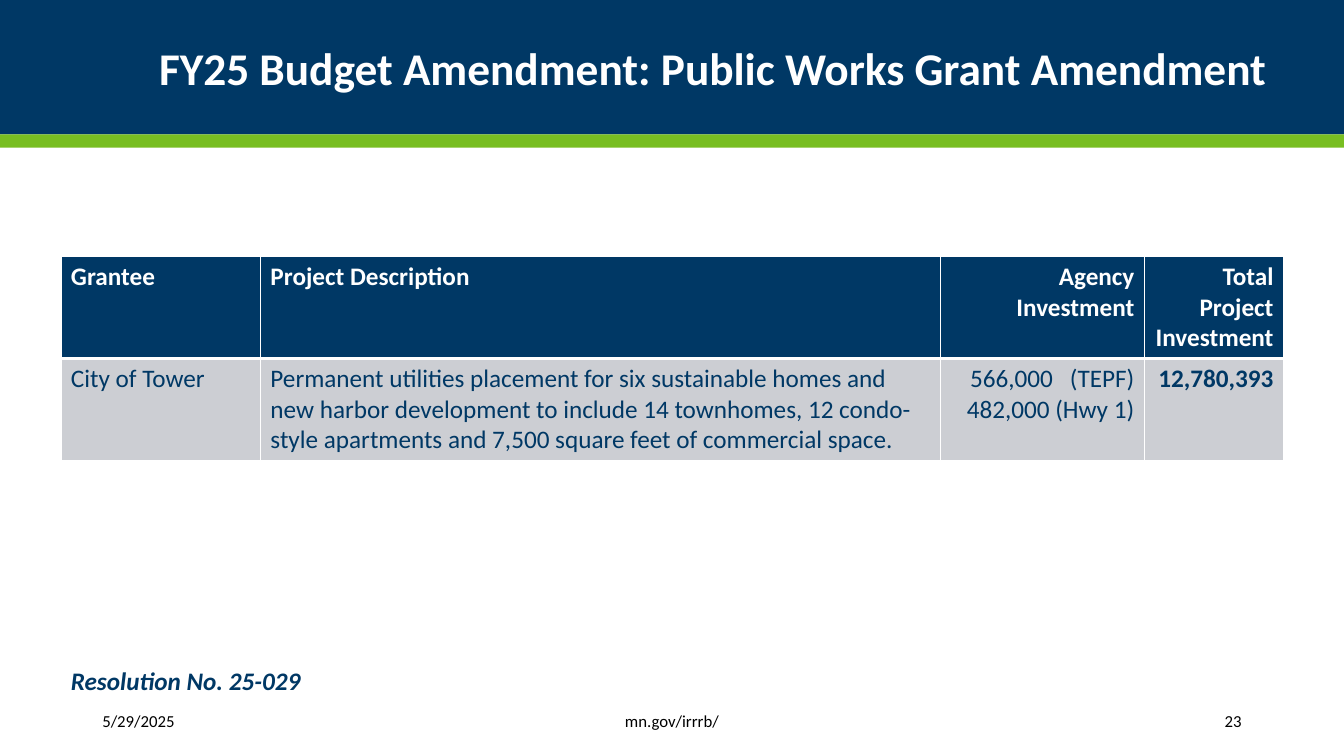
import pptx
import pptx.util
import pptx.dml.color
import pptx.enum.shapes
import pptx.enum.text
import pptx.oxml
import pptx.oxml.ns

Pt = pptx.util.Pt
ALIGN = pptx.enum.text.PP_ALIGN
ANCHOR = pptx.enum.text.MSO_ANCHOR
FONT = "Calibri"
COLORS = {
    "navy": "003865",
    "green": "78BE21",
    "white": "FFFFFF",
    "black": "000000",
    "grey": "CCCED3",
}
COLUMN_WIDTHS = [142.5, 486, 145.5, 99.4]
ROW_HEIGHT = 73
COLUMN_ALIGNS = [ALIGN.LEFT, ALIGN.LEFT, ALIGN.RIGHT, ALIGN.RIGHT]
HEADERS = ["Grantee", "Project Description", "Agency Investment", "Total Project Investment"]
PROJECT = [
    "City of Tower",
    "Permanent utilities placement for six sustainable homes and new harbor "
    "development to include 14 townhomes, 12 condo-style apartments and "
    "7,500 square feet of commercial space.",
    "",
    "12,780,393",
]
FUND_GAP = 8


def rgb(name):
    return pptx.dml.color.RGBColor.from_string(COLORS[name])


def style_paragraph(para, size, color, bold=False, italic=False, align=ALIGN.LEFT):
    para.alignment = align
    font = para.font
    font.name = FONT
    font.size = Pt(size)
    font.bold = bold
    font.italic = italic
    font.color.rgb = rgb(color)


def add_band(page, top, height, color):
    band = page.shapes.add_shape(
        pptx.enum.shapes.MSO_SHAPE.RECTANGLE, 0, Pt(top), Pt(960), Pt(height))
    band.shadow.inherit = False
    band.fill.solid()
    band.fill.fore_color.rgb = rgb(color)
    band.line.fill.background()


def add_text(page, text, left, top, width, height, size, color,
             anchor=ANCHOR.MIDDLE, line_spacing=None, **style):
    box = page.shapes.add_textbox(Pt(left), Pt(top), Pt(width), Pt(height))
    frame = box.text_frame
    frame.word_wrap = True
    frame.vertical_anchor = anchor
    para = frame.paragraphs[0]
    para.text = text
    para.line_spacing = line_spacing
    style_paragraph(para, size, color, **style)


def set_borders(cell, top, bottom):
    properties = cell._tc.get_or_add_tcPr()
    namespace = pptx.oxml.ns.nsdecls("a")
    for side, width in (("L", 1), ("R", 1), ("T", top), ("B", bottom)):
        properties.append(pptx.oxml.parse_xml(
            f'<a:ln{side} {namespace} w="{Pt(width)}"><a:solidFill>'
            f'<a:srgbClr val="{COLORS["white"]}"/></a:solidFill></a:ln{side}>'))


def fill_cell(cell, fill, top, bottom):
    set_borders(cell, top, bottom)
    cell.fill.solid()
    cell.fill.fore_color.rgb = rgb(fill)


def write_investments(cell):
    first = cell.text_frame.paragraphs[0]
    for text in ("566,000", " ", "(TEPF)"):
        span = first.add_run()
        span.text = text
        if text == " ":
            span._r.get_or_add_rPr().set("spc", str(FUND_GAP * 100))
    second = cell.text_frame.add_paragraph()
    second.text = "482,000 (Hwy 1)"
    for para in (first, second):
        style_paragraph(para, 18, "navy", align=ALIGN.RIGHT)


def add_grants_table(page):
    grants = page.shapes.add_table(
        2, len(HEADERS), Pt(43.5), Pt(183), Pt(sum(COLUMN_WIDTHS)), Pt(2 * ROW_HEIGHT)).table
    for row in grants.rows:
        row.height = Pt(ROW_HEIGHT)
    for index, width in enumerate(COLUMN_WIDTHS):
        grants.columns[index].width = Pt(width)
        align = COLUMN_ALIGNS[index]
        header, entry = grants.cell(0, index), grants.cell(1, index)
        fill_cell(header, "navy", 1, 3)
        fill_cell(entry, "grey", 3, 1)
        header.text = HEADERS[index]
        style_paragraph(header.text_frame.paragraphs[0], 18, "white", bold=True, align=align)
        if PROJECT[index]:
            entry.text = PROJECT[index]
            last = index == len(HEADERS) - 1
            style_paragraph(entry.text_frame.paragraphs[0], 18, "navy", bold=last, align=align)
        else:
            write_investments(entry)


def main():
    deck = pptx.Presentation()
    deck.slide_width, deck.slide_height = Pt(960), Pt(540)
    page = deck.slides.add_slide(deck.slide_layouts[6])
    add_band(page, 0, 96, "navy")
    add_band(page, 96, 9.4, "green")
    add_text(page, "FY25 Budget Amendment: Public Works Grant Amendment",
             84, 14.4, 828, 72, 32.4, "white", line_spacing=0.9, bold=True, align=ALIGN.RIGHT)
    for text, left, width, align in (
            ("5/29/2025", 66, 107.5, ALIGN.LEFT),
            ("mn.gov/irrrb/", 260, 440, ALIGN.CENTER),
            ("23", 779, 115, ALIGN.RIGHT)):
        add_text(page, text, left, 500.5, width, 28.8, 12, "black", align=align)
    add_grants_table(page)
    add_text(page, "Resolution No. 25-029", 43.5, 471.5, 538, 29, 18, "navy",
             anchor=ANCHOR.TOP, bold=True, italic=True)
    deck.save("out.pptx")


if __name__ == "__main__":
    main()
